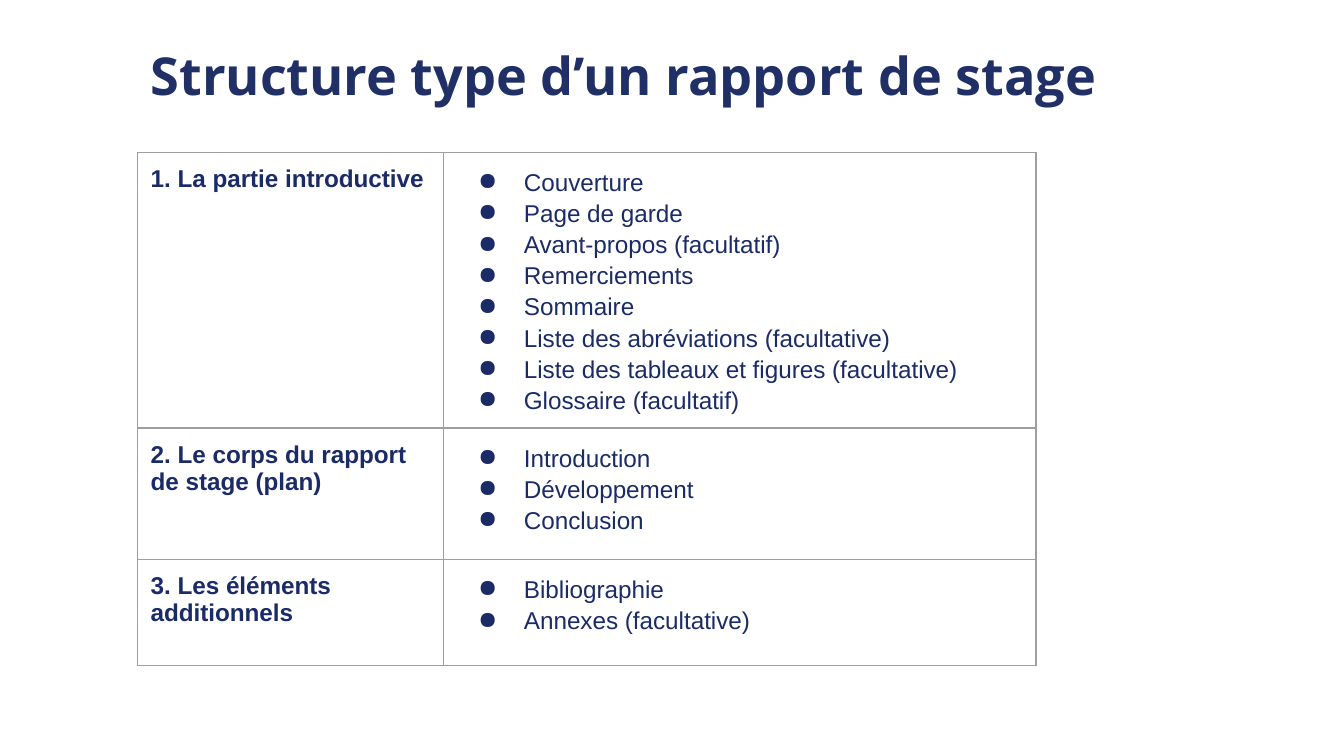
from lxml.etree import SubElement
from pptx import Presentation
from pptx.dml.color import RGBColor
from pptx.enum.text import MSO_ANCHOR, MSO_AUTO_SIZE, PP_ALIGN
from pptx.oxml.ns import qn
from pptx.util import Pt

TITLE_COLOR = "202F66"
TEXT_COLOR = "1B2B68"
BORDER_COLOR = "9E9E9E"
INSET = Pt(7.2)
COLUMN_WIDTHS = (164, 317.5)
ROW_HEIGHTS = (144.7, 70.3, 56.9)
SECTIONS = (
    ("1. La partie introductive", (
        "Couverture",
        "Page de garde",
        "Avant-propos (facultatif)",
        "Remerciements",
        "Sommaire",
        "Liste des abréviations (facultative)",
        "Liste des tableaux et figures (facultative)",
        "Glossaire (facultatif)",
    )),
    ("2. Le corps du rapport de stage (plan)", (
        "Introduction",
        "Développement",
        "Conclusion",
    )),
    ("3. Les éléments additionnels", (
        "Bibliographie",
        "Annexes (facultative)",
    )),
)


def rgb(color):
    return RGBColor.from_string(color)


def add_bullet(paragraph, color):
    properties = paragraph._p.get_or_add_pPr()
    properties.set("marL", str(Pt(36)))
    properties.set("indent", str(Pt(-24.5)))
    bullet_color = SubElement(properties, qn("a:buClr"))
    SubElement(bullet_color, qn("a:srgbClr"), val=color)
    SubElement(properties, qn("a:buChar"), char="●")


def write_text(text_frame, lines, *, size=13, font="Arial", color=TEXT_COLOR,
               bold=False, bullet=False, line_spacing=1.0):
    for index, line in enumerate(lines):
        paragraph = text_frame.add_paragraph() if index else text_frame.paragraphs[0]
        if bullet:
            add_bullet(paragraph, color)
        paragraph.alignment = PP_ALIGN.LEFT
        paragraph.line_spacing = line_spacing
        run = paragraph.add_run()
        run.text = line
        run.font.name = font
        run.font.size = Pt(size)
        run.font.bold = bold
        run.font.color.rgb = rgb(color)


def set_insets(holder):
    holder.margin_left = holder.margin_right = INSET
    holder.margin_top = holder.margin_bottom = INSET
    holder.vertical_anchor = MSO_ANCHOR.TOP


def add_title(slide, text):
    title = slide.shapes.title
    title.left, title.top, title.width, title.height = Pt(73.5), Pt(16), Pt(566.6), Pt(45.4)
    text_frame = title.text_frame
    text_frame.word_wrap = True
    text_frame.auto_size = MSO_AUTO_SIZE.NONE
    set_insets(text_frame)
    write_text(text_frame, [text], size=28, font="Open Sans", color=TITLE_COLOR, bold=True)


def format_cell(cell):
    set_insets(cell)
    properties = cell._tc.get_or_add_tcPr()
    for side in ("lnL", "lnR", "lnT", "lnB"):
        border = SubElement(properties, qn(f"a:{side}"), w=str(Pt(0.75)))
        fill = SubElement(border, qn("a:solidFill"))
        SubElement(fill, qn("a:srgbClr"), val=BORDER_COLOR)
    cell.fill.background()


def add_sections_table(slide):
    frame = slide.shapes.add_table(
        len(SECTIONS), len(COLUMN_WIDTHS), Pt(73.5), Pt(81.5),
        Pt(sum(COLUMN_WIDTHS)), Pt(sum(ROW_HEIGHTS)))
    table = frame.table
    table.first_row = False
    table.horz_banding = False
    for column, width in zip(table.columns, COLUMN_WIDTHS):
        column.width = Pt(width)
    for row, height, (heading, items) in zip(table.rows, ROW_HEIGHTS, SECTIONS):
        row.height = Pt(height)
        heading_cell, items_cell = row.cells
        format_cell(heading_cell)
        format_cell(items_cell)
        write_text(heading_cell.text_frame, [heading], bold=True)
        write_text(items_cell.text_frame, items, bullet=True, line_spacing=1.15)


def main():
    presentation = Presentation()
    presentation.slide_width = Pt(720)
    presentation.slide_height = Pt(405)
    slide = presentation.slides.add_slide(presentation.slide_layouts[5])
    add_title(slide, "Structure type d’un rapport de stage")
    add_sections_table(slide)
    presentation.save("out.pptx")


if __name__ == "__main__":
    main()
